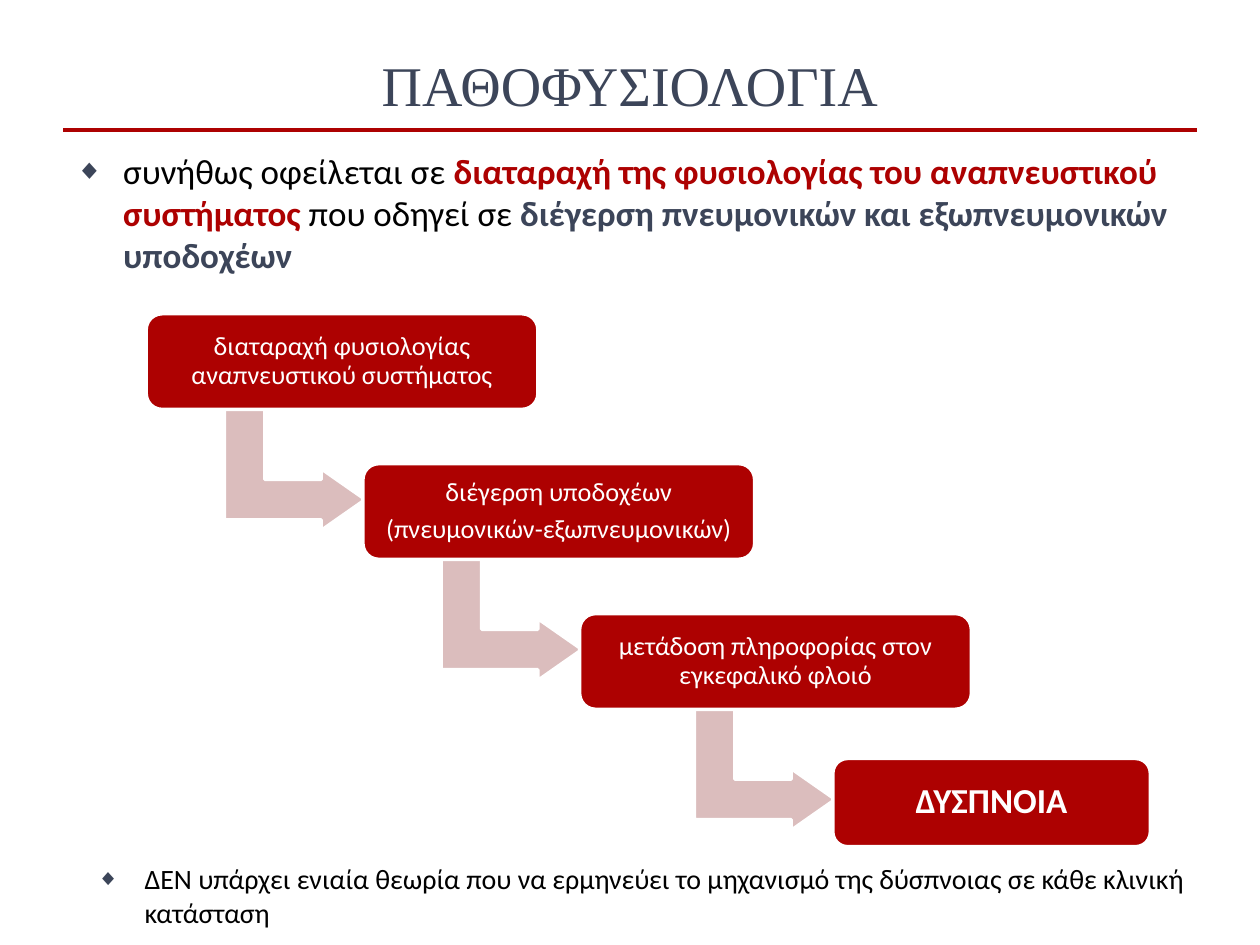
from lxml import etree
from pptx import Presentation
from pptx.dml.color import RGBColor
from pptx.enum.shapes import MSO_CONNECTOR, MSO_SHAPE
from pptx.enum.text import MSO_ANCHOR, PP_ALIGN
from pptx.oxml.ns import qn
from pptx.util import Inches, Pt

ROUNDED = MSO_SHAPE.ROUNDED_RECTANGLE
BENT_ARROW = MSO_SHAPE.BENT_UP_ARROW
STRAIGHT = MSO_CONNECTOR.STRAIGHT
MIDDLE, TOP = MSO_ANCHOR.MIDDLE, MSO_ANCHOR.TOP
CENTER, LEFT = PP_ALIGN.CENTER, PP_ALIGN.LEFT

RED, NAVY, PINK = "AD0101", "3C4559", "DBBDBD"
BLACK, WHITE = "000000", "FFFFFF"


def color(hex_string):
    return RGBColor.from_string(hex_string)


def write(paragraph, text, size=15, font="Calibri", ink=BLACK, bold=False):
    run = paragraph.add_run()
    run.text = text
    run.font.size = Pt(size)
    run.font.name = font
    run.font.color.rgb = color(ink)
    run.font.bold = bold


def add_bullet(paragraph):
    """Give the paragraph a hanging diamond bullet."""
    properties = paragraph._p.get_or_add_pPr()
    properties.set("marL", str(Inches(0.38)))
    properties.set("indent", str(-Inches(0.38)))
    bullet_color = etree.SubElement(properties, qn("a:buClr"))
    etree.SubElement(bullet_color, qn("a:srgbClr"), val=NAVY)
    etree.SubElement(properties, qn("a:buSzPct"), val="80000")
    etree.SubElement(properties, qn("a:buFont"), typeface="Arial")
    etree.SubElement(properties, qn("a:buChar"), char="◆")


class SlideBuilder:
    """Holds the current slide and draws its elements in one style."""

    def __init__(self, slide):
        self.slide = slide

    def text_box(self, left, top, width, height, runs, anchor=TOP, align=LEFT, bullet=False):
        """Add one paragraph made of (text, format) pairs."""
        box = self.slide.shapes.add_textbox(
            Inches(left), Inches(top), Inches(width), Inches(height))
        frame = box.text_frame
        frame.word_wrap = True
        frame.vertical_anchor = anchor
        paragraph = frame.paragraphs[0]
        if bullet:
            add_bullet(paragraph)
        paragraph.alignment = align
        for text, style in runs:
            write(paragraph, text, **style)

    def rule(self, left, right, top):
        line = self.slide.shapes.add_connector(
            STRAIGHT, Inches(left), Inches(top), Inches(right), Inches(top))
        line.line.color.rgb = color(RED)
        line.line.width = Pt(2)
        etree.SubElement(line._element.spPr, qn("a:effectLst"))

    def shape(self, kind, left, top, width, height, fill, adjustments):
        shape = self.slide.shapes.add_shape(
            kind, Inches(left), Inches(top), Inches(width), Inches(height))
        shape.shadow.inherit = False
        shape.fill.solid()
        shape.fill.fore_color.rgb = color(fill)
        shape.line.color.rgb = color(WHITE)
        shape.line.width = Pt(2)
        for index, value in enumerate(adjustments):
            shape.adjustments[index] = value
        return shape

    def step(self, left, top, width, height, lines, **style):
        frame = self.shape(ROUNDED, left, top, width, height, RED, [0.167]).text_frame
        frame.word_wrap = True
        frame.vertical_anchor = MIDDLE
        frame.margin_left = frame.margin_right = Inches(0.1)
        frame.margin_top = frame.margin_bottom = Inches(0.1)
        for index, text in enumerate(lines):
            paragraph = frame.paragraphs[0] if index == 0 else frame.add_paragraph()
            paragraph.alignment = CENTER
            paragraph.line_spacing = 0.9
            paragraph.space_after = Pt(5)
            write(paragraph, text, ink=WHITE, **style)

    def arrow(self, left, top):
        arrow = self.shape(BENT_ARROW, left, top, 0.98, 1.12, PINK, [0.328, 0.25, 0.358])
        arrow.rotation = 90


def main():
    presentation = Presentation()
    presentation.slide_width, presentation.slide_height = Inches(10), Inches(7.5)
    builder = SlideBuilder(presentation.slides.add_slide(presentation.slide_layouts[6]))

    title_style = dict(size=32, font="Times New Roman", ink=NAVY)
    builder.text_box(0.5, 0.3, 9, 0.73, [("ΠΑΘΟΦΥΣΙΟΛΟΓΙΑ", title_style)],
                     anchor=MIDDLE, align=CENTER)
    builder.rule(0.5, 9.5, 1.03)
    builder.text_box(0.5, 1.14, 9, 1.11, [
        ("συνήθως οφείλεται σε ", dict(size=20)),
        ("διαταραχή της φυσιολογίας του αναπνευστικού συστήματος",
         dict(size=20, ink=RED, bold=True)),
        (" που οδηγεί σε ", dict(size=20)),
        ("διέγερση πνευμονικών και εξωπνευμονικών υποδοχέων",
         dict(size=20, ink=NAVY, bold=True)),
    ], bullet=True)

    step_texts = [
        ["διαταραχή φυσιολογίας αναπνευστικού συστήματος"],
        ["διέγερση υποδοχέων", "(πνευμονικών-εξωπνευμονικών)"],
        ["μετάδοση πληροφορίας στον εγκεφαλικό φλοιό"],
    ]
    steps = [(1.16 + 1.72 * index, 2.49 + 1.19 * index, 3.11, 0.76, lines, {})
             for index, lines in enumerate(step_texts)]
    steps.append((6.61, 6.02, 2.52, 0.7, ["ΔΥΣΠΝΟΙΑ"], dict(size=20, bold=True)))
    for current, following in zip(steps, steps[1:]):
        builder.arrow(following[0] - 1.03, current[1] + 0.67)
    for left, top, width, height, lines, style in steps:
        builder.step(left, top, width, height, lines, **style)

    builder.text_box(0.67, 6.79, 9, 0.64, [
        ("ΔΕΝ υπάρχει ενιαία θεωρία που να ερμηνεύει το μηχανισμό της δύσπνοιας "
         "σε κάθε κλινική κατάσταση", dict(size=16)),
    ], bullet=True)

    presentation.save("out.pptx")


if __name__ == "__main__":
    main()
